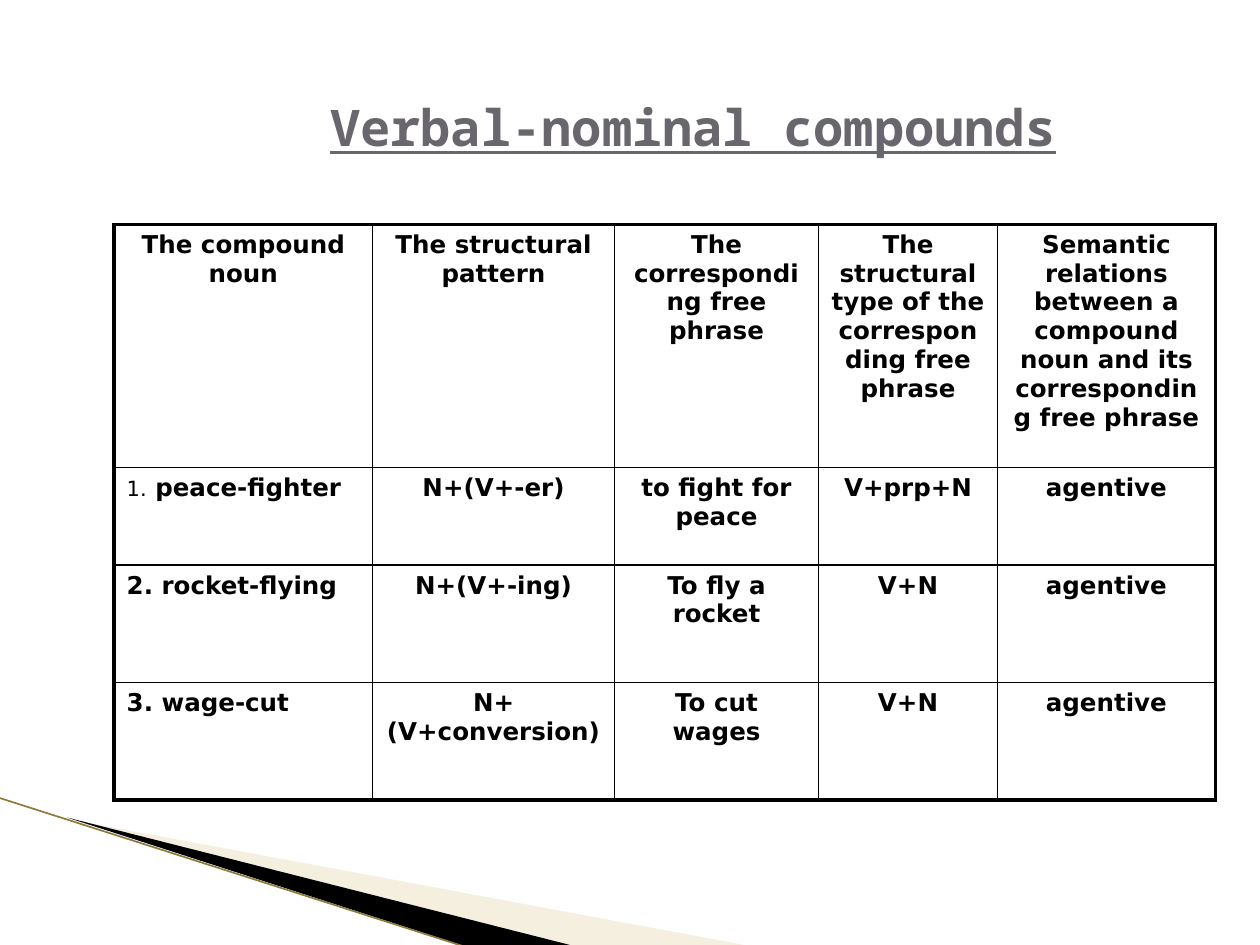
from lxml.etree import SubElement
from pptx import Presentation
from pptx.dml.color import RGBColor
from pptx.enum.shapes import MSO_CONNECTOR
from pptx.enum.text import MSO_ANCHOR, MSO_AUTO_SIZE, PP_ALIGN
from pptx.oxml.ns import qn
from pptx.util import Cm, Pt

COLORS = {
    "title": "69676D",
    "ink": "000000",
    "sand": "E4D7AD",
    "edge": "8C7B3C",
}
TITLE_FONT = "Noto Sans Mono"
TABLE_FONT = "DejaVu Sans"
COLUMN_WIDTHS = [5.21, 4.88, 4.11, 3.61, 4.39]
ROW_HEIGHTS = [4.9, 1.97, 2.37, 2.37]
ROWS = [
    [
        "The compound noun",
        "The structural pattern",
        "The corresponding free phrase",
        "The structural type of the corresponding free phrase",
        "Semantic relations between a compound noun and its corresponding free phrase",
    ],
    ["1. peace-fighter", "N+(V+-er)", "to fight for peace", "V+prp+N", "agentive"],
    ["2. rocket-flying", "N+(V+-ing)", "To fly a rocket", "V+N", "agentive"],
    ["3. wage-cut", "N+(V+conversion)", "To cut wages", "V+N", "agentive"],
]


def rgb(name):
    return RGBColor.from_string(COLORS[name])


def style_font(font, name, size, color, bold=True):
    font.name = name
    font.size = Pt(size)
    font.bold = bold
    font.color.rgb = rgb(color)


def set_frame(shape, frame):
    left, top, width, height = (Cm(value) for value in frame)
    for outline in shape._element.iter(qn("a:path")):
        outline.set("w", str(width))
        outline.set("h", str(height))
        for point in outline.iter(qn("a:pt")):
            point.set("x", str(int(point.get("x")) + shape.left - left))
            point.set("y", str(int(point.get("y")) + shape.top - top))
    shape.left, shape.top, shape.width, shape.height = left, top, width, height


def add_wedge(slide, frame, points, color, opacity=100):
    corners = [(Cm(x), Cm(y)) for x, y in points]
    builder = slide.shapes.build_freeform(*corners[0])
    builder.add_line_segments(corners[1:], close=True)
    shape = builder.convert_to_shape()
    set_frame(shape, frame)
    shape.shadow.inherit = False
    shape.fill.solid()
    shape.fill.fore_color.rgb = rgb(color)
    shape.line.fill.background()
    if opacity < 100:
        fill_color = shape.fill._xPr.find(qn("a:solidFill"))[0]
        SubElement(fill_color, qn("a:alpha"), val=str(opacity * 1000))


def add_edge(slide, start, end):
    line = slide.shapes.add_connector(
        MSO_CONNECTOR.STRAIGHT, *(Cm(value) for value in start + end)
    )
    line.line.color.rgb = rgb("edge")
    line.line.width = Pt(0.95)
    SubElement(line._element.spPr, qn("a:effectLst"))


def set_title(slide, text):
    title = slide.shapes.title
    title.left, title.top, title.width, title.height = Cm(3.81), Cm(0.91), Cm(20.32), Cm(2.01)
    frame = title.text_frame
    frame.text = text
    frame.word_wrap = True
    frame.auto_size = MSO_AUTO_SIZE.NONE
    frame.vertical_anchor = MSO_ANCHOR.TOP
    frame.margin_top = Cm(1.02)
    frame.margin_bottom = Cm(0)
    paragraph = frame.paragraphs[0]
    paragraph.alignment = PP_ALIGN.CENTER
    font = paragraph.runs[0].font
    style_font(font, TITLE_FONT, 28.8, "title")
    font.underline = True


def set_borders(cell, widths):
    properties = cell._tc.get_or_add_tcPr()
    for index, (side, width) in enumerate(widths.items()):
        border = properties.makeelement(qn(f"a:ln{side}"), {"w": str(Pt(width))})
        fill = SubElement(border, qn("a:solidFill"))
        SubElement(fill, qn("a:srgbClr"), val=COLORS["ink"])
        properties.insert(index, border)


def fill_cell(cell, text, centered):
    cell.fill.background()
    paragraph = cell.text_frame.paragraphs[0]
    paragraph.alignment = PP_ALIGN.CENTER if centered else PP_ALIGN.LEFT
    if text.startswith("1."):
        number = paragraph.add_run()
        number.text = "1."
        style_font(number.font, TABLE_FONT, 12, "ink", bold=False)
        text = text[2:]
    run = paragraph.add_run()
    run.text = text
    style_font(run.font, TABLE_FONT, 14, "ink")


def add_compound_table(slide):
    last_row, last_column = len(ROWS) - 1, len(COLUMN_WIDTHS) - 1
    table = slide.shapes.add_table(
        len(ROWS), len(COLUMN_WIDTHS), Cm(2.3), Cm(4.52),
        Cm(sum(COLUMN_WIDTHS)), Cm(sum(ROW_HEIGHTS)),
    ).table
    table.first_row = False
    table.horz_banding = False
    for column, width in zip(table.columns, COLUMN_WIDTHS):
        column.width = Cm(width)
    for row_index, texts in enumerate(ROWS):
        table.rows[row_index].height = Cm(ROW_HEIGHTS[row_index])
        for column_index, text in enumerate(texts):
            cell = table.cell(row_index, column_index)
            fill_cell(cell, text, row_index == 0 or column_index > 0)
            outer = {
                "L": column_index == 0,
                "R": column_index == last_column,
                "T": row_index == 0,
                "B": row_index == last_row,
            }
            set_borders(cell, {side: 2.25 if is_outer else 1 for side, is_outer in outer.items()})


def main():
    presentation = Presentation()
    presentation.slide_width = Cm(25.4)
    presentation.slide_height = Cm(19.05)
    slide = presentation.slides.add_slide(presentation.slide_layouts[5])
    add_wedge(
        slide, (1.98, 13.89, 10.57, 4.01),
        [(1.4, 16.52), (15.11, 19.07), (11.58, 19.07)], "sand", opacity=40,
    )
    add_wedge(
        slide, (-0.15, 16.08, 10.57, 2.34),
        [(1.35, 16.48), (11.61, 19.08), (9.45, 19.1)], "ink",
    )
    add_edge(slide, (-0.03, 16.08), (9.42, 19.1))
    set_title(slide, "Verbal-nominal compounds")
    add_compound_table(slide)
    presentation.save("out.pptx")


if __name__ == "__main__":
    main()
